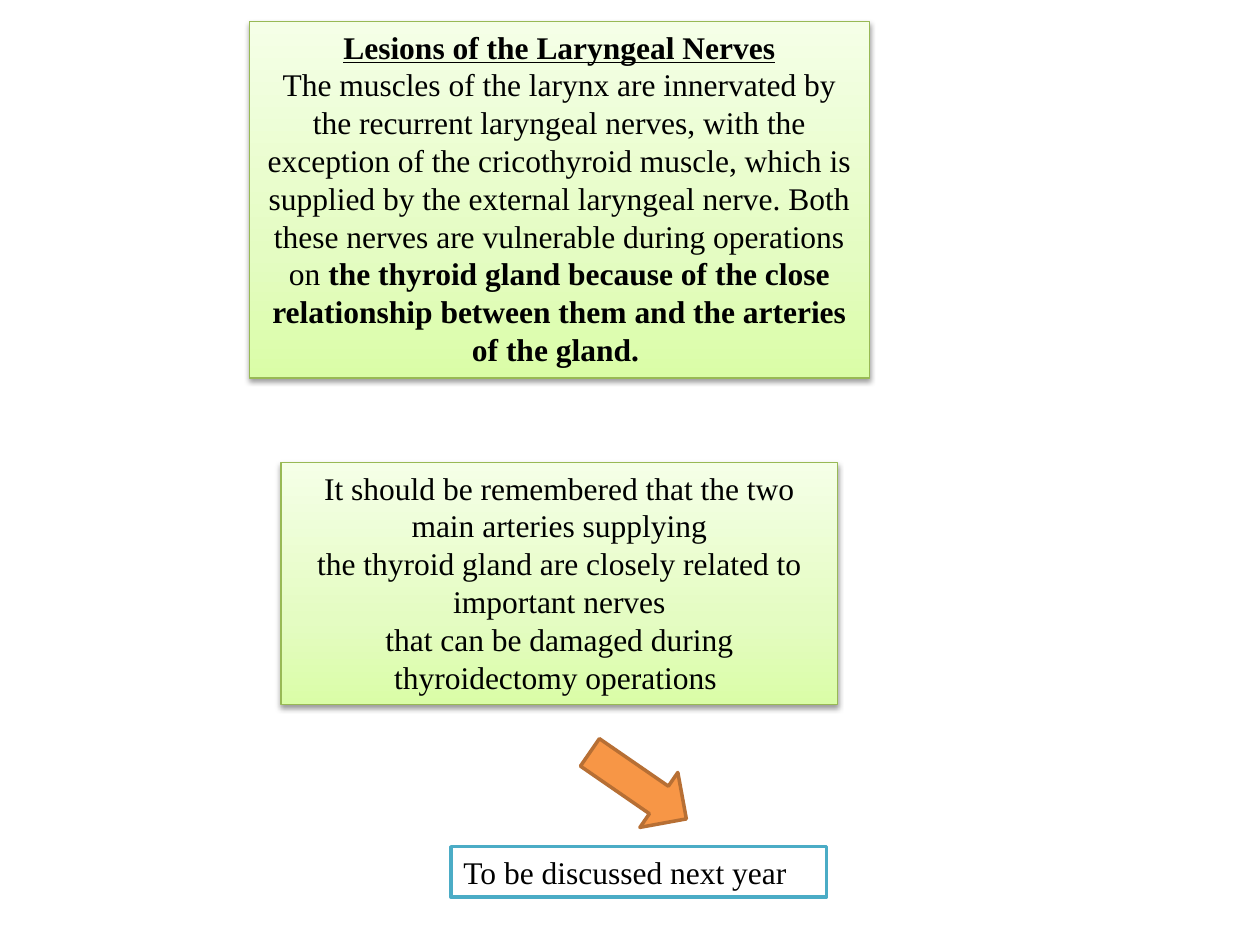
from copy import deepcopy

from lxml.etree import SubElement
from pptx import Presentation
from pptx.dml.color import RGBColor
from pptx.enum.shapes import MSO_SHAPE
from pptx.enum.text import MSO_AUTO_SIZE as AutoSize, PP_ALIGN as Align
from pptx.oxml.ns import qn
from pptx.util import Inches, Pt

BODY = {"name": "Times New Roman", "size": Pt(18)}
HEADING = {"bold": True, "underline": True}
STRONG = {"bold": True}
GREENS = [(0, "DAFDA7"), (0.35, "E4FCC2"), (1, "F5FFE7")]

LESIONS = [
    [("Lesions of the Laryngeal Nerves", HEADING)],
    [("The muscles of the larynx are innervated by the recurrent laryngeal nerves, "
      "with the exception of the cricothyroid muscle, which is supplied by the "
      "external laryngeal nerve. Both these nerves are vulnerable during operations on ", {}),
     ("the thyroid gland because of the close relationship between them and the "
      "arteries of the gland. ", STRONG)],
]
ARTERIES = [
    [("It should be remembered that the two main arteries supplying", {})],
    [("the thyroid gland are closely related to important nerves", {})],
    [("that can be damaged during thyroidectomy operations ", {})],
]
NEXT_YEAR = [[("To be discussed next year", {})]]


def color(value):
    """Turn a hex string into a colour."""
    return RGBColor.from_string(value)


def outline(shape, value, width):
    """Give a shape a solid outline."""
    shape.line.color.rgb = color(value)
    shape.line.width = Pt(width)


def fill_solid(shape, value):
    """Give a shape a plain fill."""
    shape.fill.solid()
    shape.fill.fore_color.rgb = color(value)


def fill_green(shape):
    """Shade a shape from deep green at the bottom to pale green at the top."""
    shape.fill.gradient()
    shape.fill.gradient_angle = 90
    first = shape._element.spPr.find(".//" + qn("a:gs"))
    first.addnext(deepcopy(first))
    for stop, (position, value) in zip(shape.fill.gradient_stops, GREENS):
        stop.position = position
        stop.color.rgb = color(value)


def add_soft_shadow(shape):
    """Cast a soft shadow straight down."""
    shape.shadow.inherit = False
    effects = shape._element.spPr.find(qn("a:effectLst"))
    shadow = SubElement(effects, qn("a:outerShdw"), blurRad=str(Pt(3.1)),
                        dist=str(Pt(1.6)), dir="5400000", rotWithShape="0")
    black = SubElement(shadow, qn("a:srgbClr"), val="000000")
    SubElement(black, qn("a:alpha"), val="38000")


def add_text_panel(slide, box, paragraphs, align, wrap=True):
    """Place a box that holds paragraphs of formatted runs."""
    panel = slide.shapes.add_textbox(*map(Inches, box))
    frame = panel.text_frame
    frame.word_wrap = wrap
    frame.auto_size = AutoSize.SHAPE_TO_FIT_TEXT
    for index, parts in enumerate(paragraphs):
        paragraph = frame.add_paragraph() if index else frame.paragraphs[0]
        paragraph.alignment = align
        for text, emphasis in parts:
            run = paragraph.add_run()
            run.text = text
            run.font.color.rgb = color("000000")
            for attribute, value in {**BODY, **emphasis}.items():
                setattr(run.font, attribute, value)
    return panel


def add_green_panel(slide, box, paragraphs):
    """Place a shaded panel of centred text."""
    panel = add_text_panel(slide, box, paragraphs, Align.CENTER)
    fill_green(panel)
    outline(panel, "98B955", 0.75)
    add_soft_shadow(panel)


def add_pointer(slide, box):
    """Place the tilted block arrow."""
    pointer = slide.shapes.add_shape(MSO_SHAPE.DOWN_ARROW, *map(Inches, box))
    pointer.rotation = 304.6
    pointer.shadow.inherit = False
    fill_solid(pointer, "F79646")
    outline(pointer, "B76F34", 2)


def add_next_year_note(slide, box):
    """Place the outlined note the arrow points to."""
    note = add_text_panel(slide, box, NEXT_YEAR, Align.LEFT, wrap=False)
    fill_solid(note, "FFFFFF")
    outline(note, "4BACC6", 2)


def main():
    """Build the slide and save it."""
    deck = Presentation()
    deck.slide_width, deck.slide_height = Inches(10), Inches(7.5)
    slide = deck.slides.add_slide(deck.slide_layouts[6])
    add_green_panel(slide, (1.98, 0.17, 4.92, 2.83), LESIONS)
    add_green_panel(slide, (2.23, 3.67, 4.42, 1.92), ARTERIES)
    add_pointer(slide, (4.8, 5.77, 0.53, 0.93))
    add_next_year_note(slide, (3.58, 6.72, 2.98, 0.4))
    deck.save("out.pptx")


if __name__ == "__main__":
    main()
